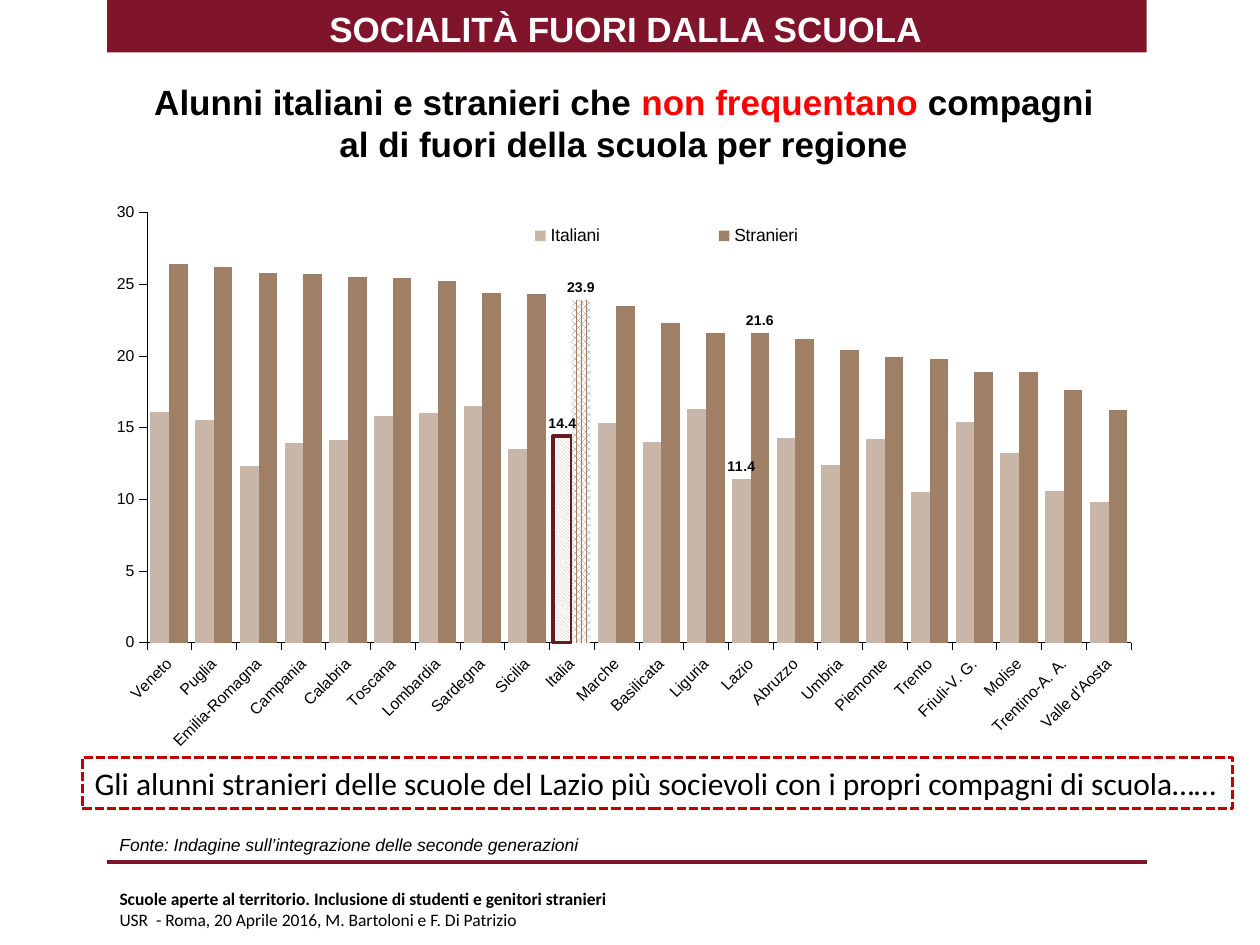
import pptx
import pptx.chart.data
import pptx.dml.color
import pptx.enum.chart
import pptx.enum.dml
import pptx.enum.shapes
import pptx.enum.text
import pptx.oxml
import pptx.oxml.ns
import pptx.util

Pt = pptx.util.Pt
RGB = pptx.dml.color.RGBColor
ALIGN = pptx.enum.text.PP_ALIGN
MIDDLE = pptx.enum.text.MSO_ANCHOR.MIDDLE
KIND = pptx.enum.chart
PATTERN = pptx.enum.dml.MSO_PATTERN
qn = pptx.oxml.ns.qn

BLACK = RGB(0, 0, 0)
WHITE = RGB(255, 255, 255)
WINE = RGB(0x7F, 0x14, 0x2A)
DARK = RGB(0x63, 0x1A, 0x20)
RED = RGB(255, 0, 0)
BRICK = RGB(0xC0, 0, 0)
SAND = RGB(0xC8, 0xB6, 0xA8)
BROWN = RGB(0x9F, 0x7F, 0x66)

LEFT, WIDTH = 61.2, 594

REGIONS = [
    "Veneto", "Puglia", "Emilia-Romagna", "Campania", "Calabria", "Toscana",
    "Lombardia", "Sardegna", "Sicilia", "Italia", "Marche", "Basilicata",
    "Liguria", "Lazio", "Abruzzo", "Umbria", "Piemonte", "Trento",
    "Friuli-V. G.", "Molise", "Trentino-A. A.", "Valle d'Aosta"]
ITALIAN = [16.1, 15.5, 12.3, 13.9, 14.1, 15.8, 16, 16.5, 13.5, 14.4, 15.3,
           14, 16.3, 11.4, 14.3, 12.4, 14.2, 10.5, 15.4, 13.2, 10.6, 9.8]
FOREIGN = [26.4, 26.2, 25.8, 25.7, 25.5, 25.4, 25.2, 24.4, 24.3, 23.9, 23.5,
           22.3, 21.6, 21.6, 21.2, 20.4, 19.9, 19.8, 18.9, 18.9, 17.6, 16.2]


def style(font, size, face="Arial", color=BLACK, bold=False, italic=False):
    font.size = Pt(size)
    font.name = face
    font.bold = bold
    font.italic = italic
    font.color.rgb = color


def write(frame, *runs, align=ALIGN.LEFT, anchor=None, wrap=True, **base):
    """Fill one paragraph with (text, format changes) runs."""
    frame.word_wrap = wrap
    frame.auto_size = pptx.enum.text.MSO_AUTO_SIZE.NONE
    if anchor is not None:
        frame.vertical_anchor = anchor
    para = frame.paragraphs[0]
    para.alignment = align
    for text, change in runs:
        for num, line in enumerate(text.split("\n")):
            if num:
                para.add_line_break()
            if line:
                run = para.add_run()
                run.text = line
                style(run.font, **{**base, **change})


def place(node, spot, after=None, inner=False):
    """Give a chart part a manual layout as fractions of the chart."""
    for old in node.findall(qn("c:layout")):
        node.remove(old)
    pairs = [("layoutTarget", "inner")] if inner else []
    pairs += [("xMode", "edge"), ("yMode", "edge")] + list(zip("xywh", spot))
    inside = "".join(f'<c:{tag} val="{val}"/>' for tag, val in pairs)
    layout = pptx.oxml.parse_xml(
        f'<c:layout {pptx.oxml.ns.nsdecls("c")}><c:manualLayout>{inside}'
        '</c:manualLayout></c:layout>')
    if after is None:
        node.insert(0, layout)
    else:
        node.find(qn(after)).addnext(layout)


class Deck:
    """Holds the presentation and its current slide."""

    def __init__(self):
        self.prs = pptx.Presentation()
        self.prs.slide_width, self.prs.slide_height = Pt(720), Pt(540)
        self.slide = self.prs.slides.add_slide(self.prs.slide_layouts[5])
        self.shapes = self.slide.shapes

    def title(self, box, *runs, **form):
        head = self.shapes.title
        head.left, head.top, head.width, head.height = map(Pt, box)
        write(head.text_frame, *runs, **form)

    def rect(self, box, fill=None):
        kind = pptx.enum.shapes.MSO_SHAPE.RECTANGLE
        shape = self.shapes.add_shape(kind, *map(Pt, box))
        shape.shadow.inherit = False
        if fill is None:
            shape.fill.background()
        else:
            shape.fill.solid()
            shape.fill.fore_color.rgb = fill
            shape.line.fill.background()
        return shape

    def rule(self, y):
        kind = pptx.enum.shapes.MSO_CONNECTOR.STRAIGHT
        line = self.shapes.add_connector(
            kind, Pt(LEFT), Pt(y), Pt(LEFT + WIDTH), Pt(y))
        line.line.color.rgb = WINE
        line.line.width = Pt(2)
        props = line._element.spPr
        props.append(props.makeelement(qn("a:effectLst"), {}))

    def text(self, box, *runs, **form):
        frame = self.shapes.add_textbox(*map(Pt, box)).text_frame
        write(frame, *runs, **form)

    def frame(self, box, *runs, **form):
        shape = self.rect(box)
        shape.line.color.rgb = BRICK
        shape.line.width = Pt(1.75)
        shape.line.dash_style = pptx.enum.dml.MSO_LINE.SQUARE_DOT
        write(shape.text_frame, *runs, **form)

    def chart(self, box):
        data = pptx.chart.data.CategoryChartData()
        data.categories = REGIONS
        data.add_series("Italiani", ITALIAN)
        data.add_series("Stranieri", FOREIGN)
        chart = self.shapes.add_chart(
            KIND.XL_CHART_TYPE.COLUMN_CLUSTERED, *map(Pt, box), data).chart
        style(chart.font, 9)
        chart.has_title = False
        plot = chart.plots[0]
        plot.gap_width = 40
        plot.vary_by_categories = False
        place(chart._chartSpace.chart.plotArea,
              (0.077, 0.04, 0.905, 0.734), inner=True)
        self.axes(chart)
        self.key(chart)
        looks = [(SAND, PATTERN.LIGHT_DOWNWARD_DIAGONAL),
                 (BROWN, PATTERN.PERCENT_75)]
        for series, (color, weave) in zip(plot.series, looks):
            self.bars(series, color, weave)
        edge = plot.series[0].points[REGIONS.index("Italia")].format.line
        edge.color.rgb = DARK
        edge.width = Pt(2)

    def axes(self, chart):
        for axis in (chart.category_axis, chart.value_axis):
            axis.has_major_gridlines = False
            axis.major_tick_mark = KIND.XL_TICK_MARK.OUTSIDE
            axis.format.line.color.rgb = BLACK
            axis.format.line.width = Pt(0.25)
            style(axis.tick_labels.font, 9)
        body = chart.category_axis._element.find(qn("c:txPr")).bodyPr
        body.set("rot", "-2700000")
        scale = chart.value_axis
        scale.minimum_scale, scale.maximum_scale = 0, 30
        scale.major_unit = 5
        scale.tick_labels.number_format = "0"
        scale.tick_labels.number_format_is_linked = False

    def key(self, chart):
        chart.has_legend = True
        legend = chart.legend
        legend.position = KIND.XL_LEGEND_POSITION.RIGHT
        legend.include_in_layout = False
        style(legend.font, 10)
        place(legend._element, (0.33, 0.05, 0.45, 0.06), after="c:legendPos")

    def bars(self, series, color, weave):
        series.format.fill.solid()
        series.format.fill.fore_color.rgb = color
        fill = series.points[REGIONS.index("Italia")].format.fill
        fill.patterned()
        fill.pattern = weave
        fill.fore_color.rgb = color
        fill.back_color.rgb = WHITE
        for name in ("Italia", "Lazio"):
            label = series.points[REGIONS.index(name)].data_label
            style(label.font, 8, bold=True)
            label.position = KIND.XL_LABEL_POSITION.OUTSIDE_END


def main():
    deck = Deck()
    deck.rect((LEFT, 0, WIDTH, 30), WINE)
    deck.rule(492.5)
    deck.title((8, 36, 697, 67.5),
               ("Alunni italiani e stranieri che ", {}),
               ("non frequentano ", {"color": RED}),
               ("compagni\nal di fuori della scuola per regione", {}),
               size=20, bold=True, align=ALIGN.CENTER, anchor=MIDDLE)
    deck.text((0, -0.5, 720, 34), ("SOCIALITÀ FUORI DALLA SCUOLA ", {}),
              size=20, bold=True, color=WHITE,
              align=ALIGN.CENTER, anchor=MIDDLE)
    deck.text((LEFT, 473, 360, 19.5),
              ("Fonte: Indagine sull’integrazione delle seconde generazioni",
               {}), size=10, italic=True)
    deck.chart((36, 108, 621.5, 335))
    deck.frame((47, 433, 657.5, 29),
               ("Gli alunni stranieri delle scuole del Lazio più socievoli "
                "con i propri compagni di scuola……", {}),
               size=18, face="Calibri", align=ALIGN.JUSTIFY,
               anchor=MIDDLE, wrap=False)
    deck.text((LEFT, 504, 658, 31.5),
              ("Scuole aperte al territorio. Inclusione di studenti e "
               "genitori stranieri\n", {"bold": True}),
              ("USR  - Roma, 20 Aprile 2016, M. Bartoloni e F. Di Patrizio",
               {}), size=10, face="Calibri")
    deck.prs.save("out.pptx")


if __name__ == "__main__":
    main()
